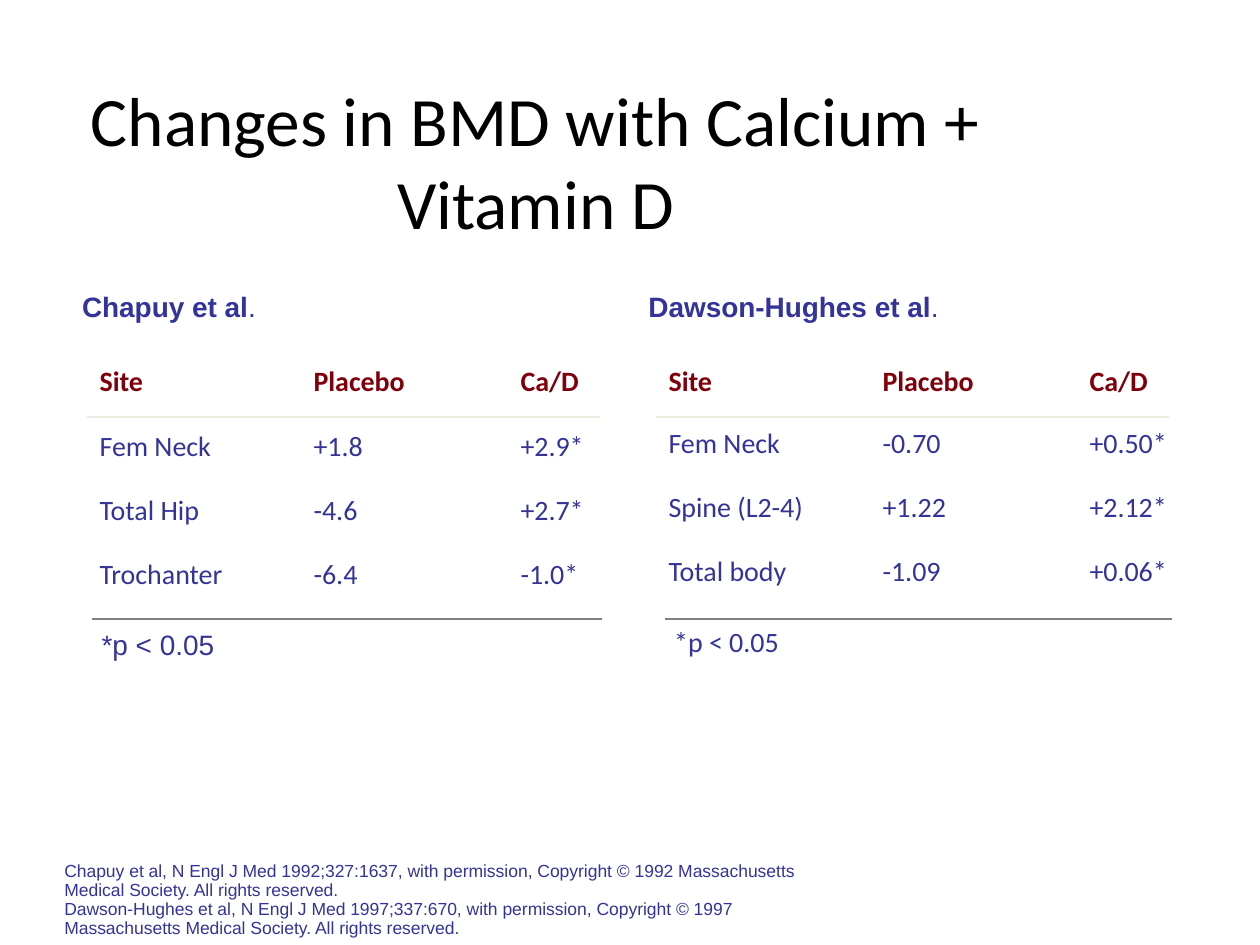
"""Build a slide comparing bone density changes in two calcium and vitamin D trials."""
from dataclasses import dataclass

import pptx
import pptx.dml.color
import pptx.enum.shapes
import pptx.enum.text
import pptx.oxml.ns
import pptx.util
from lxml import etree

SCALE = 914400 / 126
NAVY, MAROON, BLACK = "333399", "7F000B", "000000"
CREAM, GRAY = "EEECE1", "808080"
CENTER = pptx.enum.text.PP_ALIGN.CENTER
LEFT = pptx.enum.text.PP_ALIGN.LEFT
COLUMN_WIDTHS = (214, 207, 92)
TABLE_TOP, ROW_HEIGHT = 359, 64
HEADER_RULE_Y, BOTTOM_RULE_Y = 417, 619
HEADER = ("Site", "Placebo", "Ca/D")


@dataclass(frozen=True)
class Area:
    left: int
    top: int
    width: int
    height: int


@dataclass(frozen=True)
class Trial:
    author: str
    heading: Area
    table_left: int
    header_height: int
    rows: tuple[tuple[str, str, str], ...]
    bottom_rule: tuple[int, int]
    footnote: Area
    footnote_font: str


TRIALS = (
    Trial("Chapuy et al", Area(68, 287, 202, 43), 87, 58,
          (("Fem Neck", "+1.8", "+2.9*"),
           ("Total Hip", "-4.6", "+2.7*"),
           ("Trochanter", "-6.4", "-1.0*")),
          (92, 602), Area(88, 625, 140, 43), "Arial"),
    Trial("Dawson-Hughes et al", Area(634, 287, 319, 43), 656, 55,
          (("Fem Neck", "-0.70", "+0.50*"),
           ("Spine (L2-4)", "+1.22", "+2.12*"),
           ("Total body", "-1.09", "+0.06*")),
          (665, 1172), Area(661, 622, 131, 43), "Calibri"),
)
CITATIONS = (
    "Chapuy et al, N Engl J Med 1992;327:1637, with permission, "
    "Copyright © 1992 Massachusetts Medical Society. All rights reserved.\v"
    "Dawson-Hughes et al, N Engl J Med 1997;337:670, with permission, "
    "Copyright © 1997 Massachusetts Medical Society. All rights reserved."
)


def px(value: int) -> pptx.util.Emu:
    return pptx.util.Emu(round(value * SCALE))


def color(value: str) -> pptx.dml.color.RGBColor:
    return pptx.dml.color.RGBColor.from_string(value)


def style_para(para, size: float, font: str, ink: str, bold: bool = False,
               spacing: float = 1.0, align=LEFT) -> None:
    para.alignment = align
    para.line_spacing = spacing
    for span in para.runs:
        span.font.size = pptx.util.Pt(size)
        span.font.name = font
        span.font.bold = bold
        span.font.color.rgb = color(ink)


def add_text(page, area: Area, text: str, size: float, font: str, ink: str = NAVY,
             spacing: float = 0.9, align=CENTER, wrap: bool = False, middle: bool = False):
    box = page.shapes.add_textbox(px(area.left), px(area.top), px(area.width), px(area.height))
    frame = box.text_frame
    frame.text = text
    frame.word_wrap = wrap
    if middle:
        frame.vertical_anchor = pptx.enum.text.MSO_ANCHOR.MIDDLE
    para = frame.paragraphs[0]
    style_para(para, size, font, ink, spacing=spacing, align=align)
    return para


def add_rule(page, left: int, right: int, y: int, ink: str) -> None:
    rule = page.shapes.add_connector(
        pptx.enum.shapes.MSO_CONNECTOR.STRAIGHT, px(left), px(y), px(right), px(y))
    rule.line.color.rgb = color(ink)
    rule.line.width = pptx.util.Pt(1.5)
    etree.SubElement(rule.element.spPr, pptx.oxml.ns.qn("a:effectLst"))


def add_results(page, trial: Trial) -> None:
    lines = (HEADER, *trial.rows)
    width = sum(COLUMN_WIDTHS)
    height = trial.header_height + ROW_HEIGHT * len(trial.rows)
    table = page.shapes.add_table(len(lines), len(HEADER), px(trial.table_left),
                                  px(TABLE_TOP), px(width), px(height)).table
    table.first_row = False
    table.horz_banding = False
    for column, column_width in zip(table.columns, COLUMN_WIDTHS):
        column.width = px(column_width)
    for index, values in enumerate(lines):
        is_header = index == 0
        table.rows[index].height = px(trial.header_height if is_header else ROW_HEIGHT)
        for cell, value in zip(table.rows[index].cells, values):
            cell.text = value
            cell.margin_right = 0
            cell.fill.background()
            style_para(cell.text_frame.paragraphs[0], 16, "Calibri",
                       MAROON if is_header else NAVY, bold=is_header,
                       spacing=1.0 if is_header else 1.2)
    add_rule(page, trial.table_left, trial.table_left + width, HEADER_RULE_Y, CREAM)


def add_trial(page, trial: Trial) -> None:
    heading = add_text(page, trial.heading, trial.author, 16, "Arial")
    heading.add_run().text = "."
    style_para(heading, 16, "Arial", NAVY, spacing=0.9, align=CENTER)
    heading.runs[0].font.bold = True
    add_results(page, trial)
    add_rule(page, *trial.bottom_rule, BOTTOM_RULE_Y, GRAY)
    add_text(page, trial.footnote, "*p < 0.05", 16, trial.footnote_font)


def main() -> None:
    deck = pptx.Presentation()
    deck.slide_width, deck.slide_height = px(1260), px(945)
    page = deck.slides.add_slide(deck.slide_layouts[6])
    add_text(page, Area(0, 81, 1071, 158), "Changes in BMD with Calcium + Vitamin D",
             39.6, "Calibri", BLACK, spacing=1.0, wrap=True, middle=True)
    for trial in TRIALS:
        add_trial(page, trial)
    add_text(page, Area(52, 856, 806, 89), CITATIONS, 10, "Arial",
             align=LEFT, wrap=True, middle=True)
    deck.save("out.pptx")


if __name__ == "__main__":
    main()
